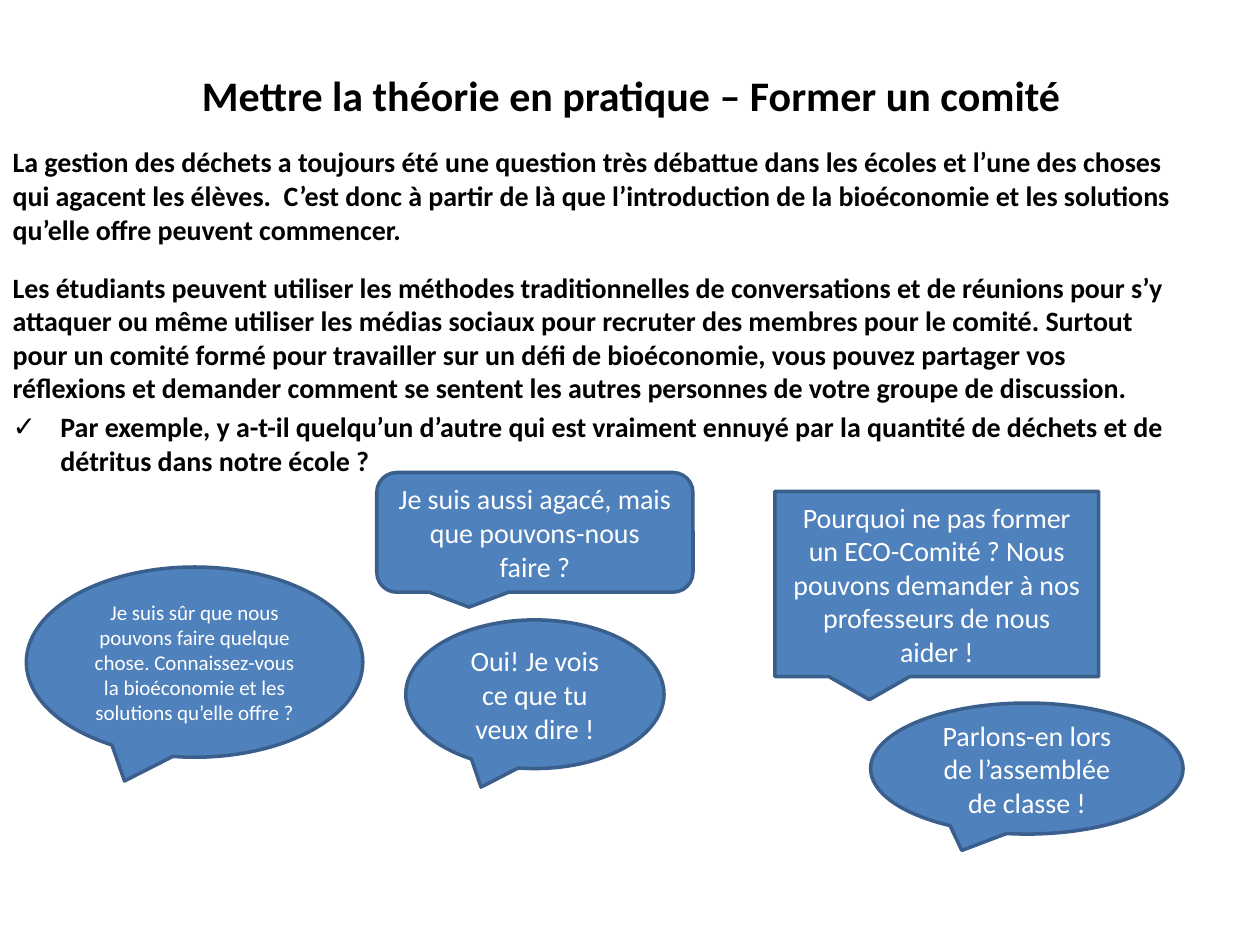
from lxml.etree import SubElement
from pptx import Presentation
from pptx.dml.color import RGBColor
from pptx.enum.shapes import MSO_SHAPE as Shape
from pptx.enum.text import MSO_ANCHOR as Anchor, MSO_AUTO_SIZE as AutoSize, PP_ALIGN as Align
from pptx.oxml.ns import qn
from pptx.util import Inches, Pt

BLACK = RGBColor(0x00, 0x00, 0x00)
WHITE = RGBColor(0xFF, 0xFF, 0xFF)
BLUE = RGBColor(0x4F, 0x81, 0xBD)
DARK_BLUE = RGBColor(0x3A, 0x5F, 0x8C)

prs = Presentation()
prs.slide_width, prs.slide_height = Inches(10), Inches(7.5)
slide = prs.slides.add_slide(prs.slide_layouts[1])

# Grid of 100 columns by 75 rows
COL, ROW = prs.slide_width / 100, prs.slide_height / 75


def grid(left, top, width, height):
    return [round(n * unit) for n, unit in zip((left, top, width, height), (COL, ROW) * 2)]


def style(paragraph, size, color, bold, align):
    paragraph.alignment = align
    for key, value in {"name": "Calibri", "size": Pt(size), "bold": bold}.items():
        setattr(paragraph.font, key, value)
    paragraph.font.color.rgb = color


# Title and body placeholders
heading, body = slide.shapes.title, slide.placeholders[1]
for holder, box in ((heading, (5.1, 1.3, 90, 12.5)), (body, (0, 11, 94.3, 59.1))):
    holder.left, holder.top, holder.width, holder.height = grid(*box)
    holder.text_frame.word_wrap = True
    holder.text_frame.auto_size = AutoSize.NONE

heading.text_frame.text = "Mettre la théorie en pratique – Former un comité"
heading.text_frame.vertical_anchor = Anchor.MIDDLE
style(heading.text_frame.paragraphs[0], 24, BLACK, True, Align.CENTER)

# Body: text, space before in points, bullet
points = [
    ("La gestion des déchets a toujours été une question très débattue dans les écoles "
     "et l’une des choses qui agacent les élèves.  C’est donc à partir de là que "
     "l’introduction de la bioéconomie et les solutions qu’elle offre peuvent commencer.",
     0, None),
    ("Les étudiants peuvent utiliser les méthodes traditionnelles de conversations et de "
     "réunions pour s’y attaquer ou même utiliser les médias sociaux pour recruter des "
     "membres pour le comité. Surtout pour un comité formé pour travailler sur un défi de "
     "bioéconomie, vous pouvez partager vos réflexions et demander comment se sentent les "
     "autres personnes de votre groupe de discussion.",
     14, None),
    ("Par exemple, y a-t-il quelqu’un d’autre qui est vraiment ennuyé par la quantité de "
     "déchets et de détritus dans notre école ?",
     3, "✓"),
]
body.text_frame.text = "\n".join(text for text, _, _ in points)
for paragraph, (_, gap, bullet) in zip(body.text_frame.paragraphs, points):
    props = paragraph._p.get_or_add_pPr()
    indent = Inches(0.38) if bullet else 0
    props.set("marL", str(indent))
    props.set("indent", str(-indent))
    if bullet:
        SubElement(props, qn("a:buChar"), char=bullet)
    else:
        SubElement(props, qn("a:buNone"))
    paragraph.space_before = Pt(gap)
    style(paragraph, 16, BLACK, True, Align.LEFT)

# Conversation bubbles: outline, place, text size, words
bubbles = [
    (Shape.OVAL_CALLOUT, (32.2, 49.2, 20.5, 11.8), 16,
     "Oui! Je vois ce que tu veux dire !"),
    (Shape.ROUNDED_RECTANGULAR_CALLOUT, (29.9, 37.5, 25.1, 9.5), 16,
     "Je suis aussi agacé, mais que pouvons-nous faire ?"),
    (Shape.OVAL_CALLOUT, (69.1, 55.8, 24.8, 10.4), 16,
     "Parlons-en lors de l’assemblée de classe !"),
    (Shape.RECTANGULAR_CALLOUT, (61.5, 39, 25.7, 14.7), 16,
     "Pourquoi ne pas former un ECO-Comité ? Nous pouvons demander à nos professeurs "
     "de nous aider !"),
    (Shape.OVAL_CALLOUT, (2.1, 45, 26.7, 15.1), 12,
     "Je suis sûr que nous pouvons faire quelque chose. Connaissez-vous la bioéconomie "
     "et les solutions qu’elle offre ?"),
]
for outline, box, size, words in bubbles:
    bubble = slide.shapes.add_shape(outline, *grid(*box))
    bubble.shadow.inherit = False
    bubble.fill.solid()
    bubble.fill.fore_color.rgb = BLUE
    bubble.line.color.rgb = DARK_BLUE
    bubble.line.width = Pt(2)
    speech = bubble.text_frame
    speech.word_wrap = True
    speech.vertical_anchor = Anchor.MIDDLE
    speech.text = words
    style(speech.paragraphs[0], size, WHITE, False, Align.CENTER)

prs.save("out.pptx")
